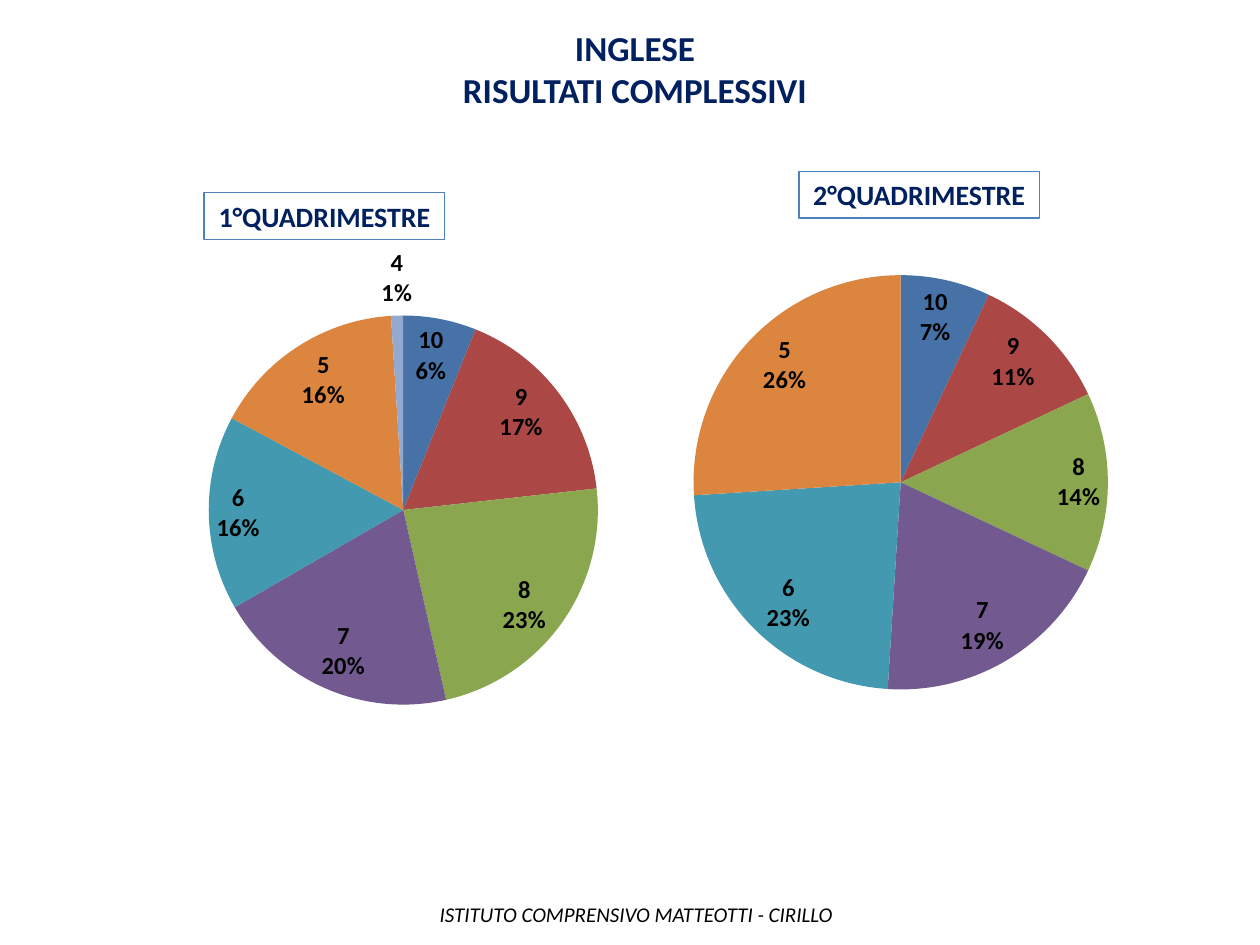
from dataclasses import dataclass

from lxml.etree import Element, SubElement
from pptx import Presentation
from pptx.chart.data import CategoryChartData
from pptx.dml.color import RGBColor
from pptx.enum.chart import XL_CHART_TYPE, XL_LABEL_POSITION
from pptx.enum.shapes import MSO_SHAPE
from pptx.enum.text import MSO_ANCHOR, PP_ALIGN
from pptx.oxml.ns import qn
from pptx.util import Inches, Pt


@dataclass(frozen=True)
class Theme:
    font: str = "Calibri"
    navy: str = "002060"
    black: str = "000000"
    border: str = "4F81BD"
    slices: tuple = ("4672A8", "AB4744", "8AA64F", "725990",
                     "4299B0", "DC853E", "93A9CE")
    title: int = 20
    tag: int = 16
    label: int = 14
    foot: int = 12


THEME = Theme()
WIDTH, HEIGHT = Inches(10), Inches(7.5)
GRADES = ("10", "9", "8", "7", "6", "5", "4")


def area(left, top, width, height):
    """Turn percentages of the slide into lengths."""
    return (int(WIDTH * left / 100), int(HEIGHT * top / 100),
            int(WIDTH * width / 100), int(HEIGHT * height / 100))


def style(font, size, color, bold=False, italic=False):
    font.name, font.size = THEME.font, Pt(size)
    font.bold, font.italic = bold, italic
    font.color.rgb = RGBColor.from_string(color)


def write(shape, text, size, color, align=PP_ALIGN.CENTER, **look):
    frame = shape.text_frame
    frame.text = text
    for para in frame.paragraphs:
        para.alignment = align
        for run in para.runs:
            style(run.font, size, color, **look)
    return frame


def add_title(slide, text, box):
    title = slide.shapes.title
    title.left, title.top, title.width, title.height = area(*box)
    frame = write(title, text, THEME.title, THEME.navy, bold=True)
    frame.vertical_anchor = MSO_ANCHOR.TOP


def add_foot(slide, text, box):
    foot = slide.shapes.add_textbox(*area(*box))
    frame = write(foot, text, THEME.foot, THEME.black, PP_ALIGN.LEFT, italic=True)
    frame.word_wrap = False


def add_tag(slide, text, box):
    tag = slide.shapes.add_shape(MSO_SHAPE.RECTANGLE, *area(*box))
    tag.shadow.inherit = False
    tag.fill.background()
    tag.line.color.rgb = RGBColor.from_string(THEME.border)
    tag.line.width = Pt(0.75)
    frame = write(tag, text, THEME.tag, THEME.navy, bold=True)
    frame.word_wrap = False


def place_plot(chart, shares):
    """Fix the inner plot area, as shares of the chart."""
    plot = chart.element.find(".//" + qn("c:plotArea"))
    for old in plot.findall(qn("c:layout")):
        plot.remove(old)
    layout = Element(qn("c:layout"))
    manual = SubElement(layout, qn("c:manualLayout"))
    values = ("inner", "edge", "edge") + shares
    names = ("layoutTarget", "xMode", "yMode", "x", "y", "w", "h")
    for name, value in zip(names, values):
        SubElement(manual, qn("c:" + name)).set("val", str(value))
    plot.insert(0, layout)


def add_labels(series, values):
    """Show grade above percentage, leaving empty slices unlabelled."""
    labels = series.data_labels
    labels.show_category_name = labels.show_percentage = True
    labels.show_value = False
    labels.position = XL_LABEL_POSITION.BEST_FIT
    style(labels.font, THEME.label, THEME.black, bold=True)
    node = series.format and series._element.find(qn("c:dLbls"))
    split = Element(qn("c:separator"))
    split.text = "\n"
    node.find(qn("c:showBubbleSize")).addnext(split)
    empty = [i for i, value in enumerate(values) if value == 0]
    for spot, index in enumerate(empty):
        label = Element(qn("c:dLbl"))
        SubElement(label, qn("c:idx")).set("val", str(index))
        SubElement(label, qn("c:delete")).set("val", "1")
        node.insert(spot, label)


def add_pie(slide, values, box, shares):
    data = CategoryChartData()
    data.categories = GRADES
    data.add_series("Series 1", values)
    chart = slide.shapes.add_chart(XL_CHART_TYPE.PIE, *area(*box), data).chart
    chart.has_legend = chart.has_title = False
    style(chart.font, 18, THEME.black)
    chart.plots[0].vary_by_categories = True
    series = chart.plots[0].series[0]
    for index, color in enumerate(THEME.slices):
        fill = series.points[index].format.fill
        fill.solid()
        fill.fore_color.rgb = RGBColor.from_string(color)
    add_labels(series, values)
    place_plot(chart, shares)


def main():
    deck = Presentation()
    deck.slide_width, deck.slide_height = WIDTH, HEIGHT
    slide = deck.slides.add_slide(deck.slide_layouts[5])
    add_title(slide, "INGLESE\nRISULTATI COMPLESSIVI", (13.8, 2.13, 73.2, 14.8))
    add_foot(slide, "ISTITUTO COMPRENSIVO MATTEOTTI - CIRILLO",
             (33.9, 94.8, 34.5, 4))
    add_pie(slide, (6, 17, 23, 20, 16, 16, 1),
            (8.3, 24.53, 45.6, 52.13), (0.18, 0.17, 0.68, 0.79))
    add_pie(slide, (7, 11, 14, 19, 23, 26, 0),
            (52.4, 29.07, 37.8, 46.27), (0.07, 0, 0.87, 0.95))
    add_tag(slide, "2°QUADRIMESTRE", (63.4, 18.13, 19.1, 4.93))
    add_tag(slide, "1°QUADRIMESTRE", (16.2, 20.4, 19.1, 4.93))
    deck.save("out.pptx")


if __name__ == "__main__":
    main()
